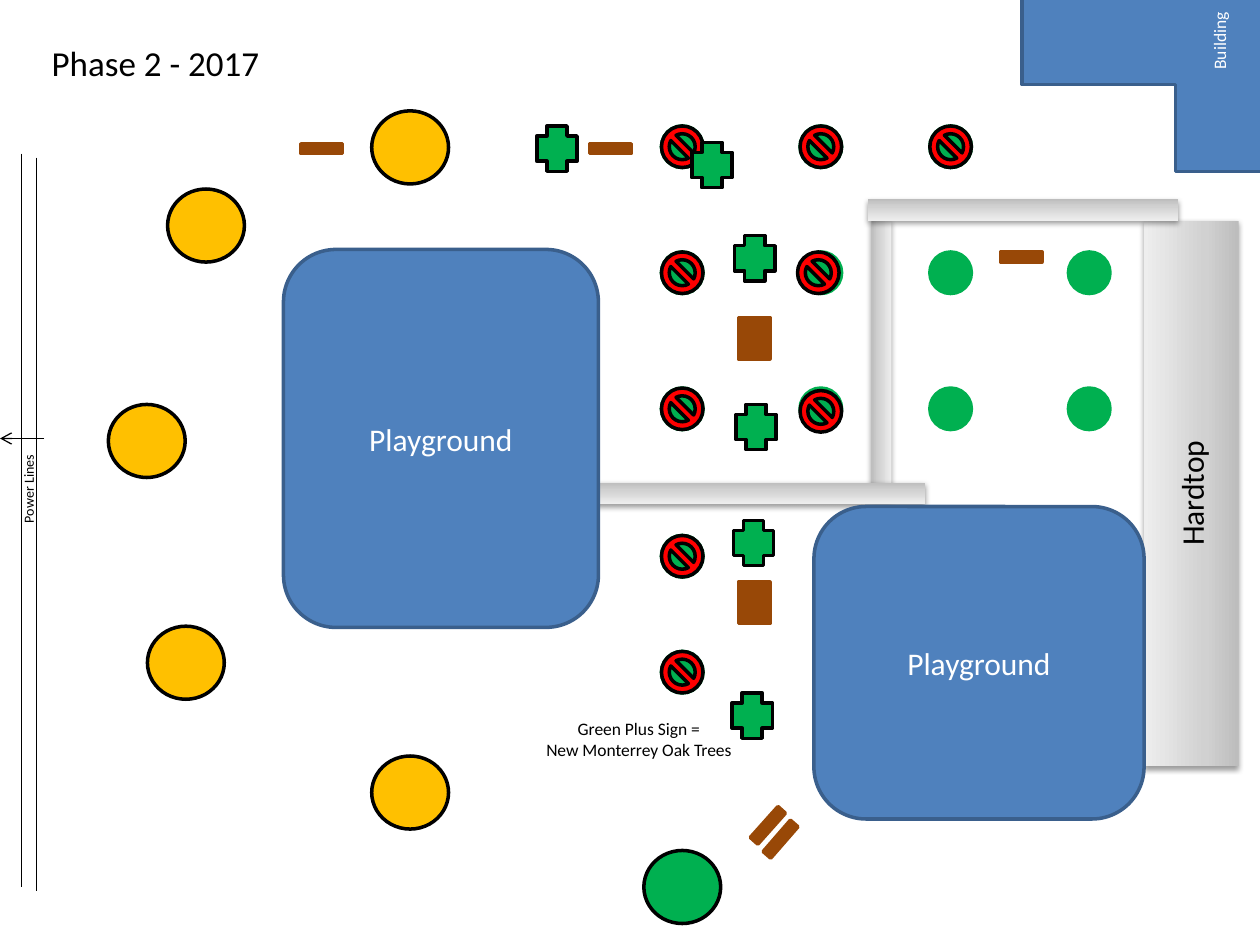
"""Build the Phase 2 tree planting plan slide."""
from copy import deepcopy

from pptx import Presentation
from pptx.dml.color import RGBColor
from pptx.enum import shapes, text
from pptx.oxml import parse_xml
from pptx.oxml.ns import nsdecls, qn
from pptx.util import Inches, Pt

THEME = {
    "font": "Calibri", "black": "000000", "white": "FFFFFF",
    "blue": "4F81BD", "edge": "3A5F8C", "green": "00B050",
    "yellow": "FFC000", "brown": "984807", "red": "FF0000",
    "path_stops": [(0, "BDBDBD"), (0.35, "D1D1D1"), (1, "EEEEEE")],
    "title": 20, "area": 18, "note": 10, "small": 8,
}
KIND = shapes.MSO_SHAPE
ALIGN = text.PP_ALIGN
ANCHOR = text.MSO_ANCHOR


def write(s, lines, size, color="black", align=ALIGN.CENTER, **frame):
    tf = s.text_frame
    for name, value in ({"word_wrap": True, "vertical_anchor": ANCHOR.MIDDLE} | frame).items():
        setattr(tf, name, value)
    for i, line in enumerate(lines):
        p = tf.add_paragraph() if i else tf.paragraphs[0]
        p.alignment = align
        r = p.add_run()
        r.text = line
        r.font.color.rgb = RGBColor.from_string(THEME[color])
        for name, value in {"name": THEME["font"], "size": Pt(THEME[size])}.items():
            setattr(r.font, name, value)


def draw(kind, box, fill=None, line=None, rotation=0):
    s = sp.add_shape(kind, *map(Inches, box))
    s.rotation = rotation
    s.shadow.inherit = False
    if fill:
        s.fill.solid()
        s.fill.fore_color.rgb = RGBColor.from_string(THEME[fill])
        s.line.color.rgb = RGBColor.from_string(THEME[line or fill])
        s.line.width = Pt(2)
    return s


prs = Presentation()
prs.slide_width, prs.slide_height = Inches(10), Inches(7.5)
slide = prs.slides.add_slide(prs.slide_layouts[5])
sp = slide.shapes

title = sp.title
for name, value in {"left": 0.31, "top": 0.25, "width": 3.96, "height": 0.5}.items():
    setattr(title, name, Inches(value))
write(title, ["Phase 2 - 2017"], "title", align=ALIGN.LEFT, auto_size=text.MSO_AUTO_SIZE.NONE)

paths = [
    ((5.89, 2.77, 2.21, 0.16), 90, None),
    ((7.29, 3.54, 4.33, 0.75), 270, "Hardtop"),
    ((6.89, 1.58, 2.46, 0.17), 180, None),
    ((4.43, 3.83, 2.91, 0.17), 180, None),
]
for box, rotation, label in paths:
    s = draw(KIND.RECTANGLE, box, rotation=rotation)
    s.line.fill.background()
    s.fill.gradient()
    s.fill.gradient_angle = 90
    stops = s._element.spPr.find(".//" + qn("a:gsLst"))
    stops.insert(1, deepcopy(stops[0]))
    for stop, (position, color) in zip(s.fill.gradient_stops, THEME["path_stops"]):
        stop.position = position
        stop.color.rgb = RGBColor.from_string(color)
    s._element.spPr.find(qn("a:effectLst")).append(parse_xml(
        f'<a:outerShdw {nsdecls("a")} blurRad="39370" dist="20320" dir="5400000" rotWithShape="0">'
        '<a:srgbClr val="000000"><a:alpha val="38000"/></a:srgbClr></a:outerShdw>'))
    if label:
        write(s, [label], "area")

small_tree = 0.33
tree_columns = [5.25, 6.35, 7.38, 8.48]
tree_rows = [(1, 3), (2, 4), (3.08, 4), (4.25, 1), (5.17, 1)]
for top, count in tree_rows:
    for left in tree_columns[:count]:
        draw(KIND.OVAL, (left, top, small_tree, small_tree), "green")

for box in [(2.25, 1.98, 2.5, 3), (6.46, 4.02, 2.62, 2.48)]:
    s = draw(KIND.ROUNDED_RECTANGLE, box, "blue", "edge")
    write(s, ["Playground"], "area", "white")

benches = [
    (7.94, 2, 0.33, 0.08, 0), (4.68, 1.14, 0.33, 0.08, 0), (2.39, 1.14, 0.33, 0.08, 0),
    (5.86, 2.52, 0.25, 0.33, 0), (5.86, 4.62, 0.25, 0.33, 0),
    (5.93, 6.51, 0.33, 0.08, 311.8), (6.03, 6.62, 0.33, 0.08, 311),
]
for *box, rotation in benches:
    draw(KIND.RECTANGLE, box, "brown", rotation=rotation)

power_lines = [
    (0.17, 1.22, 0.17, 7.04, False),
    (0.29, 1.25, 0.29, 7.07, False),
    (0.35, 3.48, 0, 3.48, True),
]
for *ends, arrow in power_lines:
    c = sp.add_connector(shapes.MSO_CONNECTOR.STRAIGHT, *map(Inches, ends))
    c.line.color.rgb = RGBColor.from_string(THEME["black"])
    c.line.width = Pt(0.75)
    if arrow:
        c.get_or_add_ln().append(parse_xml(f'<a:tailEnd {nsdecls("a")} type="arrow"/>'))
    c._element.spPr.append(parse_xml(f'<a:effectLst {nsdecls("a")}/>'))

building = draw(KIND.CORNER, (8.11, -0.02, 1.91, 1.38), "blue", "edge", 180)
write(building, ["Building"], "note", "white")
building.text_frame.paragraphs[0].line_spacing = Pt(100)
building._element.txBody.find(qn("a:bodyPr")).set("vert", "vert")

removed_trees = [
    (5.25, 1), (5.25, 2), (5.25, 3.08), (5.25, 4.25), (5.25, 5.17),
    (6.35, 1), (7.38, 1), (6.33, 2), (6.35, 3.1),
]
for left, top in removed_trees:
    draw(KIND.NO_SYMBOL, (left, top, small_tree, small_tree), "red", "black")

large_trees = [
    (2.95, 0.88, "yellow"), (1.33, 1.5, "yellow"), (0.86, 3.21, "yellow"),
    (1.17, 4.97, "yellow"), (2.95, 6, "yellow"), (5.11, 6.75, "green"),
]
for left, top, color in large_trees:
    draw(KIND.OVAL, (left, top, 0.61, 0.58), color, "black")

new_oaks = [(4.26, 1), (5.49, 1.13), (5.83, 1.87), (5.84, 3.21), (5.82, 4.13), (5.81, 5.5)]
for left, top in new_oaks:
    draw(KIND.CROSS, (left, top, 0.32, 0.36), "green", "black")

notes = [
    ((-0.52, 3.38, 1.5, 0.24), 270, ["Power Lines"], "small", ALIGN.LEFT),
    ((4.11, 5.65, 1.92, 0.44), 0, ["Green Plus Sign =", "New Monterrey Oak Trees"],
     "note", ALIGN.CENTER),
]
for box, rotation, lines, size, align in notes:
    s = sp.add_textbox(*map(Inches, box))
    s.rotation = rotation
    write(s, lines, size, align=align, vertical_anchor=ANCHOR.TOP)

prs.save("out.pptx")
